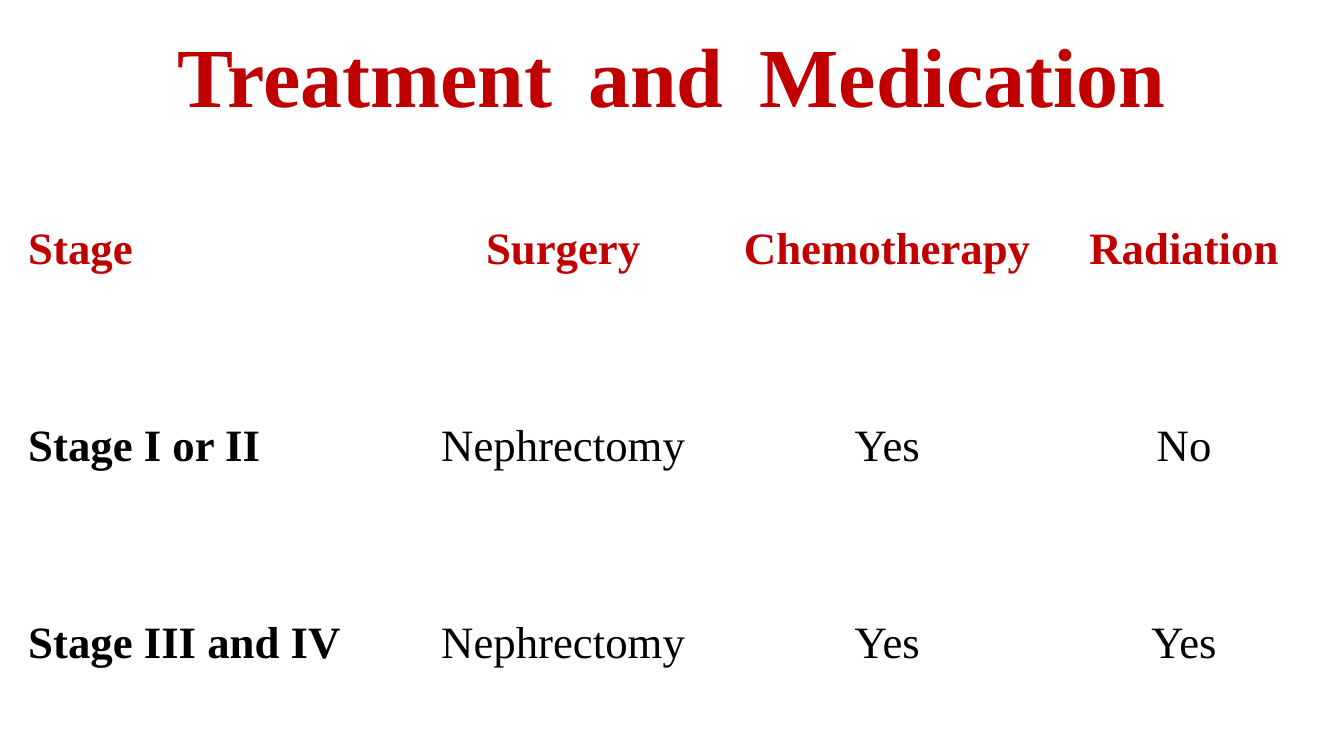
from dataclasses import dataclass

from lxml.etree import SubElement
from pptx import Presentation
from pptx.dml.color import RGBColor
from pptx.enum.text import MSO_ANCHOR, PP_ALIGN
from pptx.oxml.ns import qn
from pptx.slide import Slide
from pptx.table import _Cell
from pptx.text.text import _Paragraph
from pptx.util import Cm, Pt

FONT = "Times New Roman"
RED, BLACK, WHITE = "C00000", "000000", "FFFFFF"
COLUMN_WIDTHS = (9.37, 8.33, 8.0, 6.96)
ROW_HEIGHT = 4.96
CELL_MARGIN = Cm(0.05)


@dataclass
class TreatmentRow:
    stage: str
    surgery: str
    chemotherapy: str
    radiation: str

    def texts(self) -> tuple[str, ...]:
        return self.stage, self.surgery, self.chemotherapy, self.radiation


ROWS = (
    TreatmentRow("Stage", "Surgery", "Chemotherapy", "Radiation"),
    TreatmentRow("Stage I or II", "Nephrectomy", "Yes", "No"),
    TreatmentRow("Stage III and IV", "Nephrectomy", "Yes", "Yes"),
)


def color(code: str) -> RGBColor:
    return RGBColor.from_string(code)


def add_span(para: _Paragraph, text: str, size: int, code: str, bold: bool) -> None:
    span = para.add_run()
    span.text = text
    span.font.name = FONT
    span.font.size = Pt(size)
    span.font.bold = bold
    span.font.color.rgb = color(code)


def add_borders(cell: _Cell, bottom_width: int) -> None:
    properties = cell._tc.get_or_add_tcPr()
    widths = {"a:lnL": 1, "a:lnR": 1, "a:lnT": 1, "a:lnB": bottom_width}
    for tag, width in widths.items():
        line = SubElement(properties, qn(tag), w=str(Pt(width)))
        fill = SubElement(line, qn("a:solidFill"))
        SubElement(fill, qn("a:srgbClr"), val=WHITE)


def fill_cell(cell: _Cell, text: str, is_header: bool, is_stage: bool) -> None:
    add_borders(cell, 3 if is_header else 1)
    cell.fill.solid()
    cell.fill.fore_color.rgb = color(WHITE)
    cell.vertical_anchor = MSO_ANCHOR.MIDDLE
    cell.margin_left = cell.margin_right = CELL_MARGIN
    cell.margin_top = cell.margin_bottom = CELL_MARGIN
    para = cell.text_frame.paragraphs[0]
    para.alignment = PP_ALIGN.LEFT if is_stage else PP_ALIGN.CENTER
    para.line_spacing = 1.5
    add_span(para, text, 32, RED if is_header else BLACK, is_header or is_stage)


def add_title(page: Slide) -> None:
    box = page.shapes.add_textbox(Cm(4.23), Cm(0), Cm(25.4), Cm(3.94))
    frame = box.text_frame
    frame.word_wrap = True
    frame.vertical_anchor = MSO_ANCHOR.TOP
    frame.margin_top = Cm(0.89)
    para = frame.paragraphs[0]
    para.alignment = PP_ALIGN.JUSTIFY
    para.line_spacing = 0.9
    add_span(para, "Treatment and Medication", 60, RED, True)
    para.add_line_break()


def add_treatment_table(page: Slide) -> None:
    table = page.shapes.add_table(
        len(ROWS), len(COLUMN_WIDTHS), Cm(0.66), Cm(3.5),
        Cm(sum(COLUMN_WIDTHS)), Cm(ROW_HEIGHT * len(ROWS)),
    ).table
    for column, width in zip(table.columns, COLUMN_WIDTHS):
        column.width = Cm(width)
    for row_index, row in enumerate(ROWS):
        table.rows[row_index].height = Cm(ROW_HEIGHT)
        for column_index, text in enumerate(row.texts()):
            cell = table.cell(row_index, column_index)
            fill_cell(cell, text, row_index == 0, column_index == 0)


def main() -> None:
    deck = Presentation()
    deck.slide_width, deck.slide_height = Cm(33.87), Cm(19.05)
    page = deck.slides.add_slide(deck.slide_layouts[6])
    add_title(page)
    add_treatment_table(page)
    deck.save("out.pptx")


if __name__ == "__main__":
    main()
